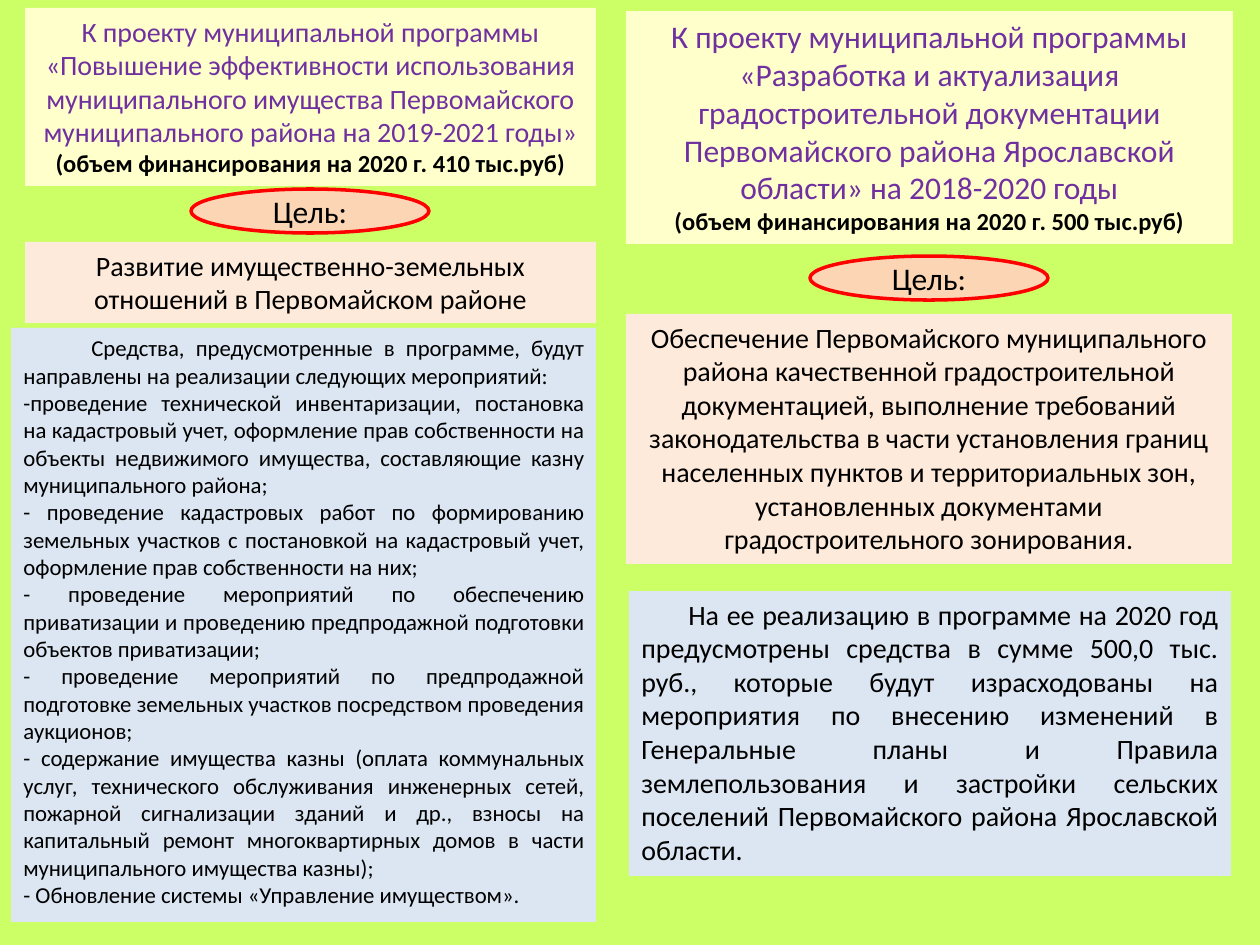
from lxml.etree import SubElement
from pptx import Presentation
from pptx.dml.color import RGBColor
from pptx.enum.shapes import MSO_SHAPE as Shape
from pptx.enum.text import MSO_ANCHOR as Anchor, MSO_AUTO_SIZE as AutoSize, PP_ALIGN as Align
from pptx.oxml.ns import qn
from pptx.util import Emu, Pt

PX = 914400 / 126
FONT = "Calibri"
BLACK, PURPLE, OUTLINE, RED = "000000", "7030A0", "558ED5", "FF0000"
LIME, CREAM, PEACH, ORANGE, BLUE = "CCFF66", "FFFFCC", "FDEADA", "FCD5B5", "DCE6F2"

MEASURES = [
    "Средства, предусмотренные в программе, будут направлены на реализации следующих мероприятий:",
    "-проведение технической инвентаризации, постановка на кадастровый учет, оформление прав "
    "собственности на объекты недвижимого имущества, составляющие казну муниципального района;",
    "- проведение кадастровых работ по формированию земельных участков с постановкой на "
    "кадастровый учет, оформление прав собственности на них;",
    "- проведение мероприятий по обеспечению приватизации и проведению предпродажной "
    "подготовки объектов приватизации;",
    "- проведение мероприятий по предпродажной подготовке земельных участков посредством "
    "проведения аукционов;",
    "- содержание имущества казны (оплата коммунальных услуг, технического обслуживания "
    "инженерных сетей, пожарной сигнализации зданий и др., взносы на капитальный ремонт "
    "многоквартирных домов в части муниципального имущества казны);",
    "- Обновление системы «Управление имуществом».",
]
SPENDING = [
    "На ее реализацию в программе на 2020 год предусмотрены средства в сумме 500,0 тыс. руб., "
    "которые будут израсходованы на мероприятия по внесению изменений в Генеральные планы и "
    "Правила землепользования и застройки сельских поселений Первомайского района "
    "Ярославской области."
]
PROPERTY_PROGRAM = (
    "К проекту муниципальной программы «Повышение эффективности использования муниципального "
    "имущества Первомайского муниципального района на 2019-2021 годы»"
)
PLANNING_PROGRAM = (
    "К проекту муниципальной программы «Разработка и актуализация градостроительной "
    "документации Первомайского района Ярославской области» на 2018-2020 годы"
)
PROPERTY_GOAL = "Развитие имущественно-земельных отношений в Первомайском районе"
PLANNING_GOAL = (
    "Обеспечение Первомайского муниципального района качественной градостроительной "
    "документацией, выполнение требований законодательства в части установления границ "
    "населенных пунктов и территориальных зон, установленных документами "
    "градостроительного зонирования."
)


def px(length):
    """Turn a length in px into EMU."""
    return Emu(round(length * PX))


def rgb(value):
    """Turn a hex string into a colour."""
    return RGBColor.from_string(value)


def style(run, size, color=BLACK, bold=False):
    """Set the font of a run."""
    run.font.name = FONT
    run.font.size = Pt(size)
    run.font.bold = bold
    run.font.color.rgb = rgb(color)


def outline_letters(run):
    """Give the letters of a run a thin outline."""
    properties = run._r.get_or_add_rPr()
    line = SubElement(properties, qn("a:ln"), w=str(Pt(0.75)))
    SubElement(SubElement(line, qn("a:solidFill")), qn("a:srgbClr"), val=OUTLINE)
    properties.insert(0, line)


def add_panel(slide, bounds, color, texts, align):
    """Add a filled text panel and return its paragraphs."""
    panel = slide.shapes.add_textbox(*map(px, bounds))
    panel.fill.solid()
    panel.fill.fore_color.rgb = rgb(color)
    frame = panel.text_frame
    frame.word_wrap = True
    frame.auto_size = AutoSize.SHAPE_TO_FIT_TEXT
    frame.text = "\n".join(texts)
    for paragraph in frame.paragraphs:
        paragraph.alignment = align
    return frame.paragraphs


def add_title(slide, bounds, program, budget, size):
    """Add a programme title with its budget below."""
    funding = f"(объем финансирования на 2020 г. {budget} тыс.руб)"
    title, note = add_panel(slide, bounds, CREAM, [program, funding], Align.CENTER)
    style(title.runs[0], size, PURPLE)
    outline_letters(title.runs[0])
    style(note.runs[0], 14, bold=True)


def add_goal(slide, bounds, goal):
    """Add the statement of a programme's goal."""
    statement, = add_panel(slide, bounds, PEACH, [goal], Align.CENTER)
    style(statement.runs[0], 16)


def add_details(slide, bounds, texts, size, indent):
    """Add justified text whose first paragraph is indented."""
    paragraphs = add_panel(slide, bounds, BLUE, texts, Align.JUSTIFY)
    paragraphs[0]._p.get_or_add_pPr().set("indent", str(px(indent)))
    for paragraph in paragraphs:
        style(paragraph.runs[0], size)


def add_goal_label(slide, left, top):
    """Add the red-edged oval that announces a goal."""
    oval = slide.shapes.add_shape(Shape.OVAL, px(left), px(top), px(238), px(44))
    oval.shadow.inherit = False
    oval.fill.solid()
    oval.fill.fore_color.rgb = rgb(ORANGE)
    oval.line.color.rgb = rgb(RED)
    oval.line.width = Pt(2)
    frame = oval.text_frame
    frame.text = "Цель:"
    frame.vertical_anchor = Anchor.MIDDLE
    label = frame.paragraphs[0]
    label.alignment = Align.CENTER
    style(label.runs[0], 18)


def main():
    """Build the slide with both programmes."""
    deck = Presentation()
    deck.slide_width, deck.slide_height = px(1260), px(945)
    slide = deck.slides.add_slide(deck.slide_layouts[6])
    slide.background.fill.solid()
    slide.background.fill.fore_color.rgb = rgb(LIME)

    add_goal_label(slide, 191, 189)
    add_title(slide, (25, 8, 571, 178), PROPERTY_PROGRAM, 410, 16)
    add_goal(slide, (25, 242, 571, 81), PROPERTY_GOAL)
    add_details(slide, (11, 328, 585, 594), MEASURES, 13, 68)

    add_title(slide, (626, 11, 607, 233), PLANNING_PROGRAM, 500, 18)
    add_goal_label(slide, 810, 256)
    add_goal(slide, (626, 314, 606, 250), PLANNING_GOAL)
    add_details(slide, (629, 591, 602, 285), SPENDING, 16, 47)

    deck.save("out.pptx")


if __name__ == "__main__":
    main()
